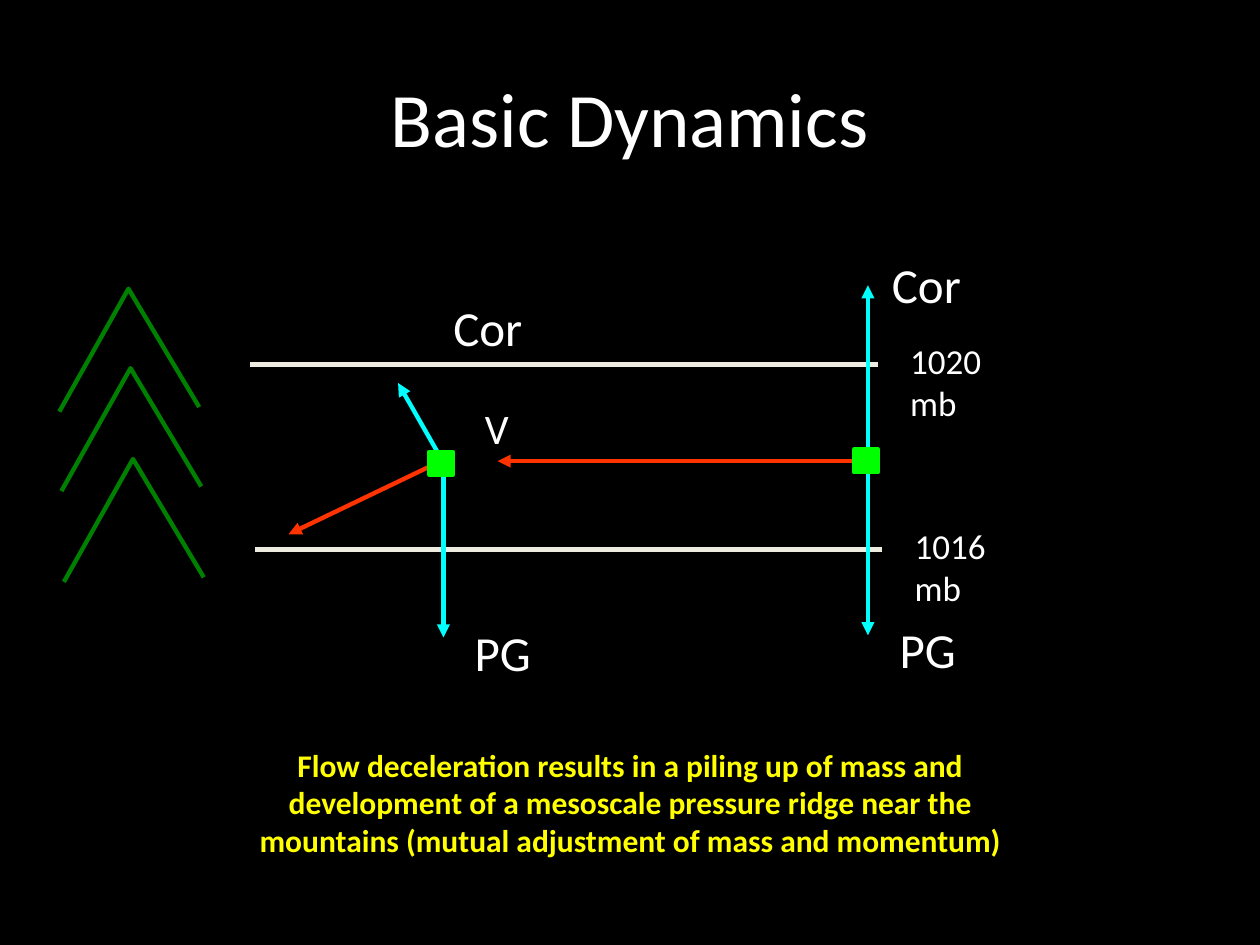
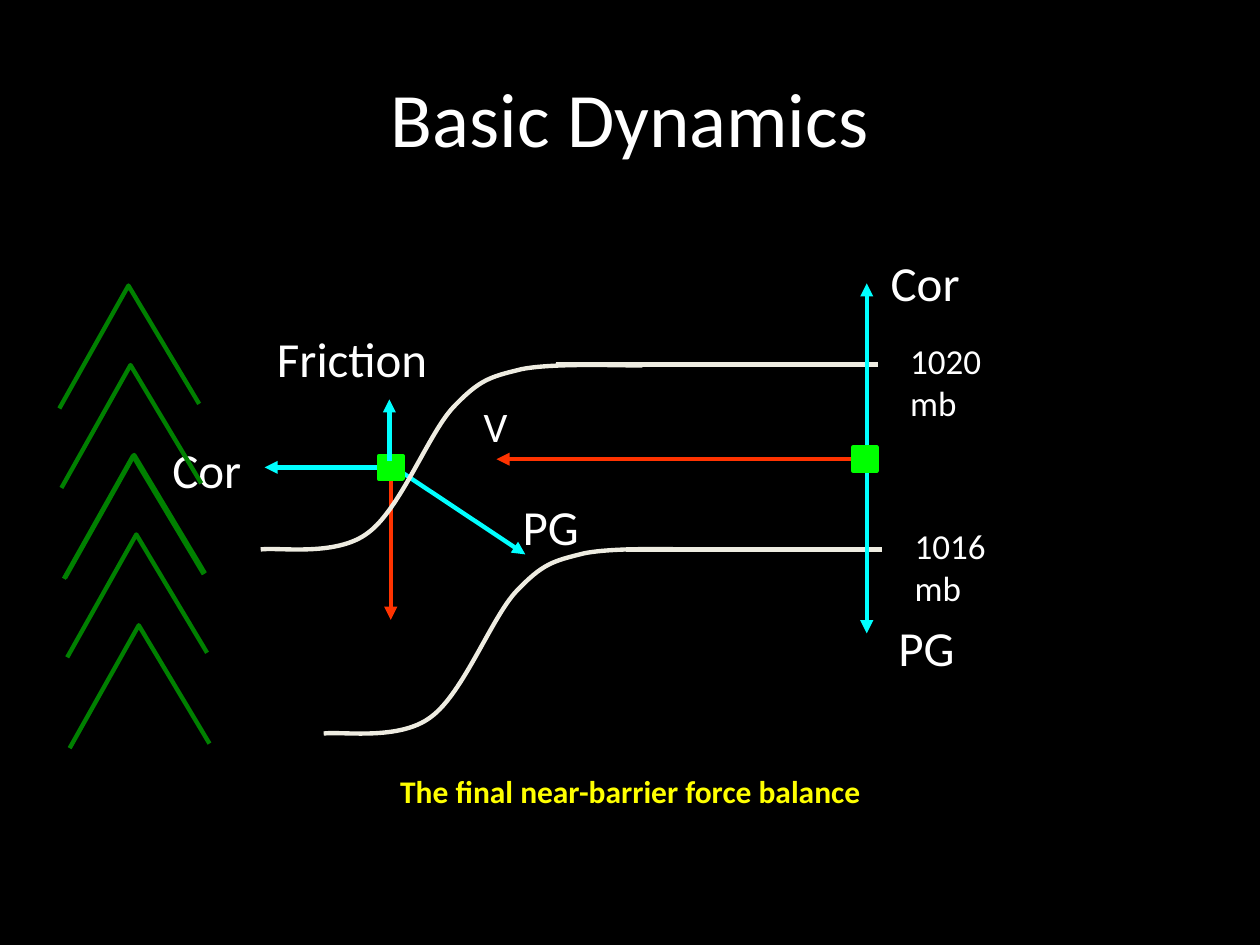
from dataclasses import dataclass

from lxml.etree import SubElement
from pptx import Presentation
from pptx.dml.color import RGBColor as Color
from pptx.enum.shapes import MSO_CONNECTOR as Connector, MSO_SHAPE as Preset
from pptx.enum.text import MSO_ANCHOR as Anchor, PP_ALIGN as Align
from pptx.oxml.ns import qn
from pptx.util import Pt


@dataclass(frozen=True)
class Theme:
    font: str = "Calibri"
    background: Color = Color(0x00, 0x00, 0x00)
    text: Color = Color(0xFF, 0xFF, 0xFF)
    caption: Color = Color(0xFF, 0xFF, 0x00)
    isobar: Color = Color(0xEE, 0xEC, 0xE1)
    wind: Color = Color(0xFF, 0x33, 0x00)
    force: Color = Color(0x00, 0xFF, 0xFF)
    parcel: Color = Color(0x00, 0xFF, 0x00)
    mountain: Color = Color(0x00, 0x80, 0x00)
    title_size: float = 44
    force_size: float = 28
    wind_size: float = 24
    caption_size: float = 18
    isobar_size: float = 20
    stroke: float = 2.5


THEME = Theme()
PEAK_OFFSETS = [(0, 0), (1.2, 45.4), (2.6, 97.3)]
RIDGE_CURVE = [
    (10.1, -1.4), (43.2, 4.3), (61.2, -9.4),
    (79.9, -23), (95.8, -66.2), (110.2, -81.4),
    (125.3, -97.2), (131, -98.6), (149, -103),
    (167, -106.6), (203.8, -105.1), (218.2, -105.1),
]


def add_text(slide, text, left, top, width, height, size,
             color=THEME.text, align=Align.LEFT, anchor=Anchor.TOP, bold=False):
    box = slide.shapes.add_textbox(Pt(left), Pt(top), Pt(width), Pt(height))
    frame = box.text_frame
    frame.word_wrap = True
    frame.vertical_anchor = anchor
    para = frame.paragraphs[0]
    para.alignment = align
    span = para.add_run()
    span.text = text
    span.font.name = THEME.font
    span.font.size = Pt(size)
    span.font.bold = bold
    span.font.color.rgb = color


def add_force_label(slide, text, left, top, width=56):
    add_text(slide, text, left, top, width, 41, THEME.force_size)


def add_caption(slide, text, top, height):
    add_text(slide, text, 134.6, top, 451.4, height, THEME.caption_size,
             THEME.caption, Align.CENTER, bold=True)


def set_stroke(shape, color):
    shape.line.color.rgb = color
    shape.line.width = Pt(THEME.stroke)


def add_line(slide, start, end, color):
    line = slide.shapes.add_connector(
        Connector.STRAIGHT, *(Pt(value) for value in (*start, *end)))
    set_stroke(line, color)
    SubElement(line._element.spPr, qn("a:effectLst"))
    return line


def add_arrow(slide, start, end, color=THEME.force):
    arrow = add_line(slide, start, end, color)
    SubElement(arrow.line._get_or_add_ln(), qn("a:tailEnd"), type="triangle")


def add_parcel(slide, left, top):
    parcel = slide.shapes.add_shape(
        Preset.RECTANGLE, Pt(left), Pt(top), Pt(13.7), Pt(13))
    parcel.shadow.inherit = False
    parcel.fill.solid()
    parcel.fill.fore_color.rgb = THEME.parcel
    set_stroke(parcel, THEME.parcel)


def add_outline(shapes, left, top, offsets, color):
    builder = shapes.build_freeform(Pt(left), Pt(top))
    builder.add_line_segments(
        [(Pt(left + dx), Pt(top + dy)) for dx, dy in offsets], close=False)
    outline = builder.convert_to_shape()
    outline.shadow.inherit = False
    outline.fill.background()
    set_stroke(outline, color)
    return outline


def add_curved_isobar(slide, left, top):
    curve = add_outline(slide.shapes, left, top, RIDGE_CURVE, THEME.isobar)
    segments = list(curve._element.iter(qn("a:lnTo")))
    for index in range(0, len(segments), 3):
        bezier = SubElement(segments[index].getparent(), qn("a:cubicBezTo"))
        for segment in segments[index:index + 3]:
            bezier.append(segment[0])
            segment.getparent().remove(segment)


def add_mountains(slide, left, top):
    group = slide.shapes.add_group_shape()
    for dx, dy in PEAK_OFFSETS:
        add_outline(group.shapes, left + dx, top + dy,
                    [(39.5, -70.2), (79.9, -2.6)], THEME.mountain)


def add_isobars(slide, upper_start, lower_start):
    rows = [("1020 mb", upper_start, 501.5, 208.4, 513),
            ("1016 mb", lower_start, 504, 314, 515.6)]
    for label, start, end, height, label_left in rows:
        add_line(slide, (start, height), (end, height), THEME.isobar)
        add_text(slide, label, label_left, height - 17.8, 85, 31,
                 THEME.isobar_size)


def add_upstream_balance(slide, dx=0, dy=0):
    center_x, center_y = 496 + dx, 263 + dy
    add_arrow(slide, (center_x - 1.4, center_y + 0.5),
              (284.4 + dx, center_y + 0.5), THEME.wind)
    add_text(slide, "V", 270 + dx, 226.6 + dy, 32, 36, THEME.wind_size)
    for reach in (100, -100):
        add_arrow(slide, (center_x, center_y), (center_x, center_y + reach))
    add_force_label(slide, "PG", 507 + dx, 350.6 + dy)
    add_force_label(slide, "Cor", 502.6 + dx, 141.9 + dy)
    add_parcel(slide, center_x - 7.9, center_y - 6.1)


def add_dynamics_slide(deck):
    slide = deck.slides.add_slide(deck.slide_layouts[6])
    slide.background.fill.solid()
    slide.background.fill.fore_color.rgb = THEME.background
    add_text(slide, "Basic Dynamics", 36, 21.6, 648, 90, THEME.title_size,
             align=Align.CENTER, anchor=Anchor.MIDDLE)
    return slide


def build_deceleration(deck):
    page = add_dynamics_slide(deck)
    add_isobars(page, 143, 146)
    add_upstream_balance(page)
    add_mountains(page, 33.9, 235.2)
    add_caption(page, "Flow deceleration results in a piling up of mass and "
                "development of a mesoscale pressure ridge near the mountains "
                "(mutual adjustment of mass and momentum)", 422.6, 94)
    add_force_label(page, "PG", 264.2, 352)
    add_force_label(page, "Cor", 252, 166.3)
    add_arrow(page, (252, 263.5), (164.9, 305.3), THEME.wind)
    for tip in [(253.4, 364.3), (227.5, 218.9)]:
        add_arrow(page, (253.4, 264.2), tip)
    add_parcel(page, 245.2, 258.2)


def build_final_balance(deck):
    page = add_dynamics_slide(deck)
    add_caption(page, "The final near-barrier force balance", 437.8, 29)
    add_force_label(page, "Cor", 91.4, 247.7)
    add_isobars(page, 317.5, 358)
    add_upstream_balance(page, -0.7, -1.1)
    add_arrow(page, (223.3, 265.7), (223.3, 354.2), THEME.wind)
    for tip in [(300.2, 316.8), (151.2, 267.1)]:
        add_arrow(page, (225.4, 267.1), tip)
    add_force_label(page, "PG", 291.6, 280)
    add_parcel(page, 216.5, 260.6)
    for left, top in [(149, 314), (185, 419.2)]:
        add_curved_isobar(page, left, top)
    add_arrow(page, (222.5, 263.5), (222.5, 228.2))
    add_force_label(page, "Friction", 151.2, 184.3, 103)
    for left, top in [(33.9, 233.4), (37.2, 330.2)]:
        add_mountains(page, left, top)


def main():
    deck = Presentation()
    deck.slide_width, deck.slide_height = Pt(720), Pt(540)
    build_deceleration(deck)
    build_final_balance(deck)
    deck.save("out.pptx")


if __name__ == "__main__":
    main()
